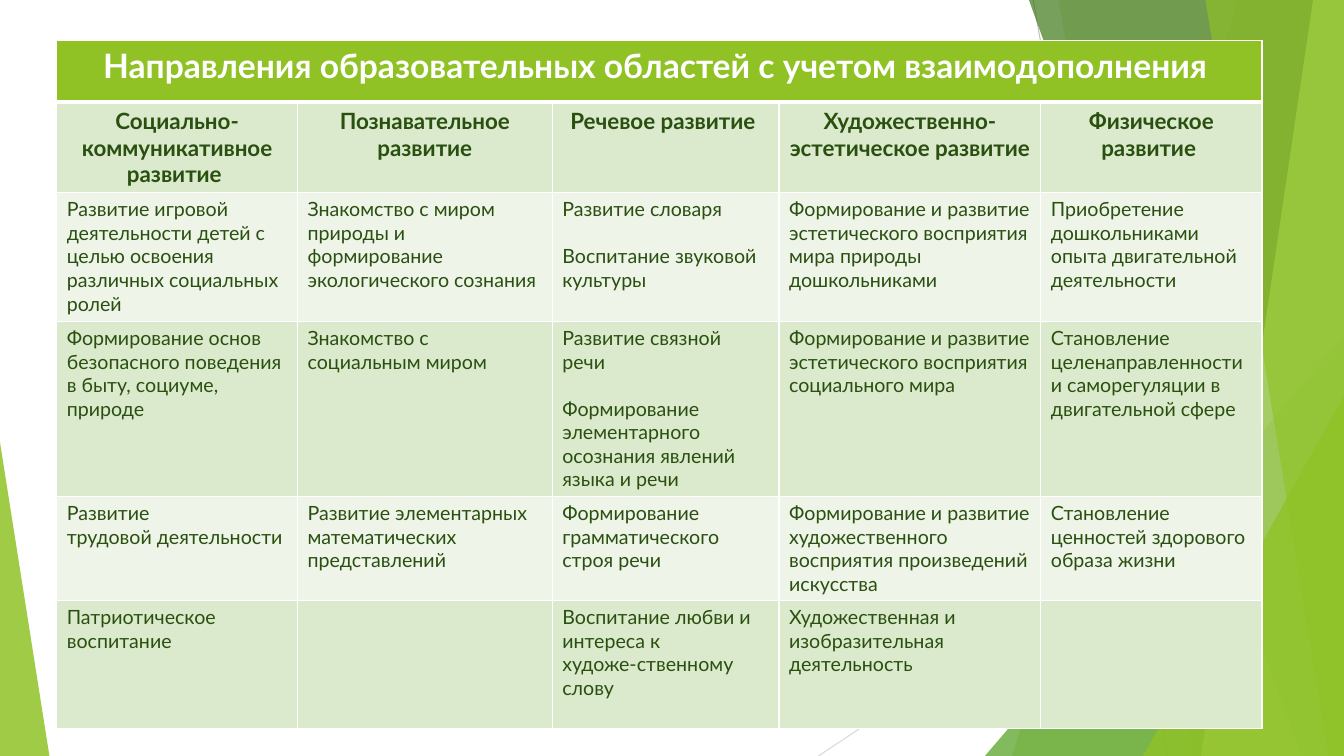
from lxml import etree
from pptx import Presentation
from pptx.dml.color import RGBColor
from pptx.enum.shapes import MSO_CONNECTOR as Connector, MSO_SHAPE as Shape
from pptx.enum.text import PP_ALIGN as Align
from pptx.oxml.ns import qn
from pptx.util import Pt

SLIDE_WIDTH, SLIDE_HEIGHT = 960, 540
GREEN, WHITE, DARK = "90C226", "FFFFFF", "2A5010"
PALE, LIGHT = "EEF4E8", "DBE9CD"

TITLE_FORMAT = {"size": Pt(24), "bold": True, "name": "Lato"}
HEADING_FORMAT = {"size": Pt(16), "bold": True, "name": "Lato"}
BODY_FORMAT = {"size": Pt(14), "bold": False, "name": "Lato"}
SKIPPED_LINE = Pt(16.8)

COLUMN_WIDTHS = [172, 182, 162, 187, 158]
ROW_HEIGHTS = [44, 64, 92, 109, 74.5, 91.5]

TITLE = "Направления образовательных областей с учетом взаимодополнения "
HEADINGS = [
    "Социально- коммуникативное развитие ",
    "Познавательное развитие",
    "Речевое развитие ",
    "Художественно- эстетическое развитие ",
    "Физическое развитие ",
]
# Each cell is a list of paragraphs
DIRECTIONS = [
    [
        ["Развитие игровой деятельности детей с целью освоения различных социальных ролей"],
        ["Знакомство с миром природы и формирование экологического сознания"],
        ["Развитие словаря", "Воспитание звуковой культуры"],
        ["Формирование и развитие эстетического восприятия мира природы", "дошкольниками"],
        ["Приобретение дошкольниками опыта двигательной", "деятельности"],
    ],
    [
        ["Формирование основ", "безопасного поведения в быту, социуме, природе"],
        ["Знакомство с социальным миром"],
        ["Развитие связной речи", "Формирование элементарного осознания явлений языка и речи"],
        ["Формирование и развитие эстетического восприятия социального мира"],
        ["Становление целенаправленности и саморегуляции в двигательной сфере"],
    ],
    [
        ["Развитие", "трудовой деятельности"],
        ["Развитие элементарных математических представлений"],
        ["Формирование грамматического строя речи"],
        ["Формирование и развитие", "художественного восприятия произведений искусства"],
        ["Становление ценностей здорового образа жизни"],
    ],
    [
        ["Патриотическое воспитание"],
        [],
        ["Воспитание любви и интереса к", "художе-ственному слову"],
        ["Художественная и изобразительная деятельность"],
        [],
    ],
]
# Paragraphs set apart from the one above by a line
SPACED = {"Воспитание звуковой культуры",
          "Формирование элементарного осознания явлений языка и речи"}


def color(value):
    return RGBColor.from_string(value)


def paint(shape, fill, opacity):
    shape.shadow.inherit = False
    shape.line.fill.background()
    shape.fill.solid()
    shape.fill.fore_color.rgb = color(fill)
    solid = shape.fill._xPr.find(qn("a:solidFill"))
    etree.SubElement(solid[0], qn("a:alpha"), val=str(opacity * 1000))


def add_line(slide, start, end, line_color):
    line = slide.shapes.add_connector(
        Connector.STRAIGHT, *(Pt(value) for value in start + end))
    line.line.color.rgb = color(line_color)
    line.line.width = Pt(0.75)
    etree.SubElement(line._element.spPr, qn("a:effectLst"))


def add_band(slide, right, height, top_x, bottom_x, fill, opacity):
    """Band from a slanted left edge to the right side of its box."""
    builder = slide.shapes.build_freeform(Pt(top_x), 0)
    corners = [(right, 0), (right, height), (bottom_x, height)]
    builder.add_line_segments([(Pt(x), Pt(y)) for x, y in corners], close=True)
    paint(builder.convert_to_shape(), fill, opacity)


def add_wedge(slide, box, apex, fill, opacity):
    wedge = slide.shapes.add_shape(
        Shape.ISOSCELES_TRIANGLE, *(Pt(value) for value in box))
    wedge.adjustments[0] = apex
    paint(wedge, fill, opacity)


def add_backdrop(slide, width, height):
    # Thin lines
    add_line(slide, (738, 0), (834, height), "BFBFBF")
    add_line(slide, (width, 290), (584.6, height), "D9D9D9")
    # Overlapping facets on the right
    add_band(slide, width, height, 884, 723, GREEN, 30)
    add_band(slide, width, height, 756, 852, GREEN, 20)
    add_wedge(slide, (703.5, 240, width - 703.5, height - 240), 1, "54A021", 72)
    add_band(slide, width, height, 735, 929.5, "3F7819", 70)
    add_band(slide, width, height, 938, 858, "C0E474", 70)
    add_band(slide, width, height, 861, 949, GREEN, 65)
    add_wedge(slide, (816.5, 283, width - 816.5, height - 283), 1, GREEN, 80)
    # Left corner
    add_wedge(slide, (0, 316, 35.3, height - 316), 0, GREEN, 85)


def set_borders(cell, bottom_width=1):
    properties = cell._tc.get_or_add_tcPr()
    widths = {"lnL": 1, "lnR": 1, "lnT": 1, "lnB": bottom_width}
    for index, (side, width) in enumerate(widths.items()):
        border = etree.Element(qn(f"a:{side}"), w=str(Pt(width)))
        solid = etree.SubElement(border, qn("a:solidFill"))
        etree.SubElement(solid, qn("a:srgbClr"), val=WHITE)
        properties.insert(index, border)


def fill_cell(cell, paragraphs, font_format, fill, text_color=DARK,
              align=Align.LEFT, bottom_width=1):
    cell.fill.solid()
    cell.fill.fore_color.rgb = color(fill)
    set_borders(cell, bottom_width)
    frame = cell.text_frame
    for index, text in enumerate(paragraphs):
        paragraph = frame.add_paragraph() if index else frame.paragraphs[0]
        paragraph.alignment = align
        if text in SPACED:
            paragraph.space_before = SKIPPED_LINE
        run = paragraph.add_run()
        run.text = text
        for name, value in font_format.items():
            setattr(run.font, name, value)
        run.font.color.rgb = color(text_color)


def add_directions_table(slide, left, top):
    table = slide.shapes.add_table(
        len(ROW_HEIGHTS), len(COLUMN_WIDTHS), Pt(left), Pt(top),
        Pt(sum(COLUMN_WIDTHS)), Pt(sum(ROW_HEIGHTS))).table
    table.horz_banding = False
    for column, width in zip(table.columns, COLUMN_WIDTHS):
        column.width = Pt(width)
    for row, height in zip(table.rows, ROW_HEIGHTS):
        row.height = Pt(height)

    # Title row across all columns
    table.cell(0, 0).merge(table.cell(0, len(COLUMN_WIDTHS) - 1))
    for index, cell in enumerate(table.rows[0].cells):
        fill_cell(cell, [] if index else [TITLE], TITLE_FORMAT, GREEN, WHITE,
                  Align.CENTER, bottom_width=3)
    # Area headings
    for cell, heading in zip(table.rows[1].cells, HEADINGS):
        fill_cell(cell, [heading], HEADING_FORMAT, LIGHT, align=Align.CENTER)
    # Directions in alternating shades
    for index, row in enumerate(DIRECTIONS):
        for cell, paragraphs in zip(table.rows[index + 2].cells, row):
            fill_cell(cell, paragraphs, BODY_FORMAT, LIGHT if index % 2 else PALE)


def main():
    presentation = Presentation()
    presentation.slide_width = Pt(SLIDE_WIDTH)
    presentation.slide_height = Pt(SLIDE_HEIGHT)
    slide = presentation.slides.add_slide(presentation.slide_layouts[6])
    add_backdrop(slide, SLIDE_WIDTH, SLIDE_HEIGHT)
    add_directions_table(slide, 40.5, 29)
    presentation.save("out.pptx")


if __name__ == "__main__":
    main()
